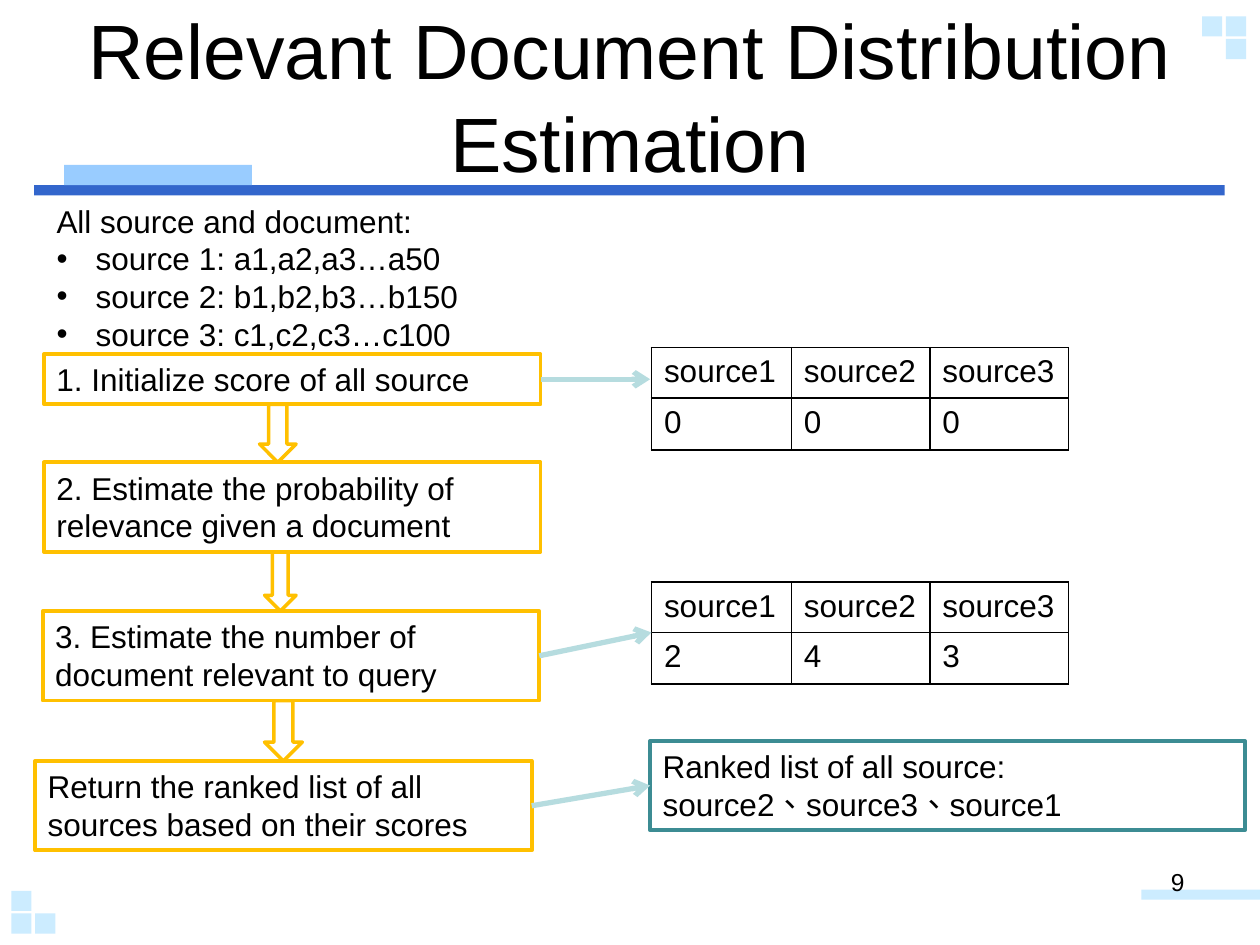
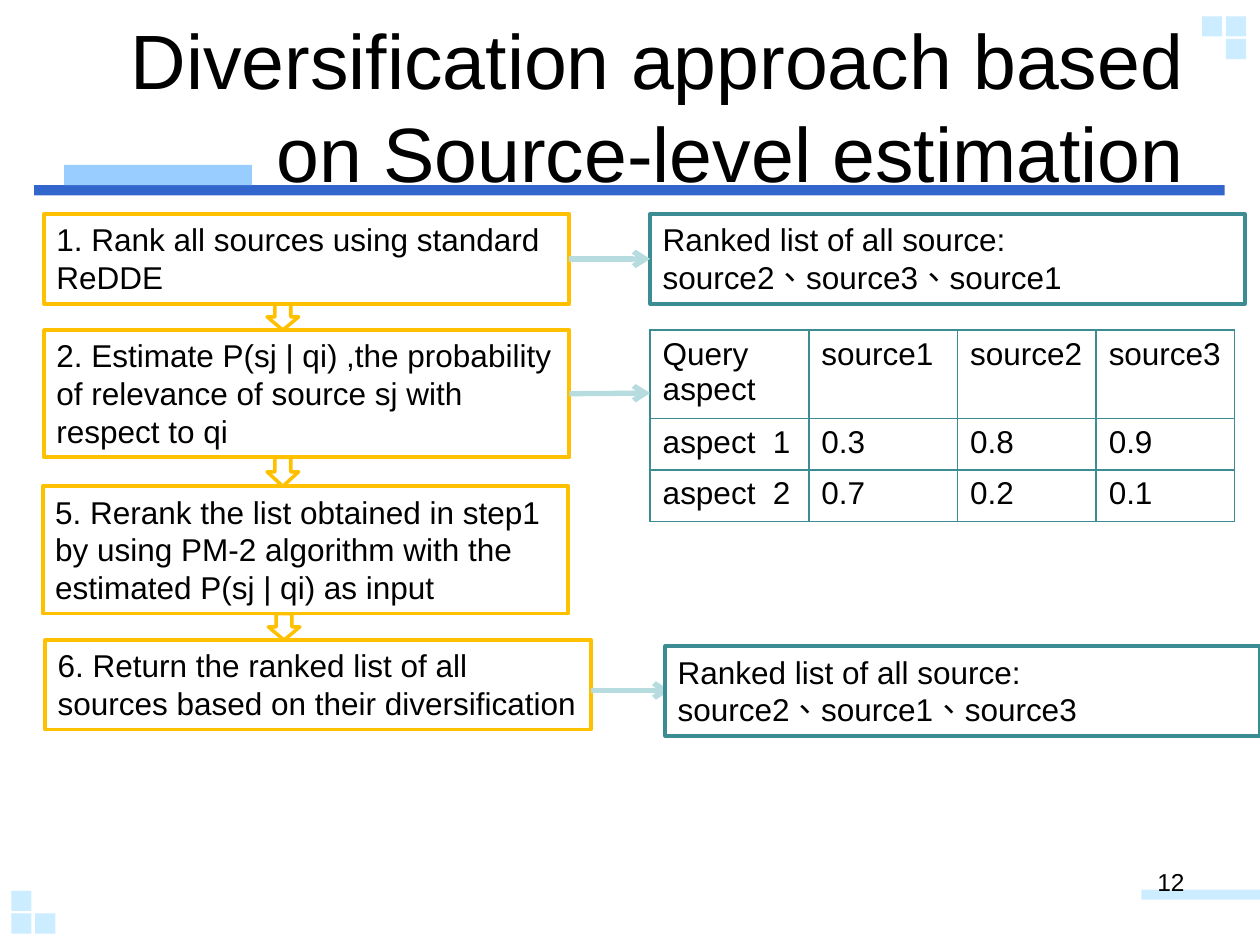
import pptx
import pptx.dml.color
import pptx.enum.shapes
import pptx.enum.text
import pptx.oxml.ns
import pptx.util
from lxml import etree

PX = 9144  # 100 px to the inch
FONT = "Arial"
BLACK, WHITE = "000000", "FFFFFF"
BLUE, SKY, PALE = "3366CC", "99CCFF", "CCECFF"
GOLD, TEAL, MINT = "FFC000", "3C8C93", "B6DCDF"
SHAPE = pptx.enum.shapes.MSO_SHAPE
ALIGN = pptx.enum.text.PP_ALIGN
ANCHOR = pptx.enum.text.MSO_ANCHOR


def px(*nums):
    return [pptx.util.Emu(num * PX) for num in nums]


def color(code):
    return pptx.dml.color.RGBColor.from_string(code)


def add(node, tag, **attrs):
    return etree.SubElement(node, pptx.oxml.ns.qn(tag), attrs)


def write(frame, text, size=18, align=ALIGN.LEFT, anchor=ANCHOR.TOP,
          bullet=False):
    """Fill a text frame, one paragraph a line; bullets start at line two."""
    frame.word_wrap = True
    frame.vertical_anchor = anchor
    for num, line in enumerate(text.split("\n")):
        para = frame.paragraphs[0] if num == 0 else frame.add_paragraph()
        if bullet and num:
            props = para._p.get_or_add_pPr()
            props.set("marL", str(31 * PX))
            props.set("indent", str(-31 * PX))
            add(props, "a:buFont", typeface=FONT)
            add(props, "a:buChar", char="•")
        para.alignment = align
        run = para.add_run()
        run.text = line
        run._r.get_or_add_rPr().set("lang", "zh-TW")
        run.font.name = FONT
        run.font.size = pptx.util.Pt(size)
        run.font.color.rgb = color(BLACK)


class Deck:
    def __init__(self):
        self.prs = pptx.Presentation()
        self.prs.slide_width, self.prs.slide_height = px(1000, 750)

    def page(self, title, num, top, align):
        """Start a slide with its bands, corner squares, title and number."""
        self.slide = self.prs.slides.add_slide(self.prs.slide_layouts[6])
        self.shapes = self.slide.shapes
        self.shape(27, 147, 945, 8, fill=BLUE)
        self.shape(51, 131, 149, 16, fill=SKY)
        self.shape(906, 706, 94, 8, fill=PALE)
        for left, y in ((973, 13), (954, 13), (973, 31),
                        (9, 725), (28, 725), (9, 707)):
            self.shape(left, y, 16, 16, fill=PALE)
        self.text(50, top, 900, 125, title, size=44, align=align,
                  anchor=ANCHOR.MIDDLE)
        self.text(717, 683, 233, 52, num, size=14, align=ALIGN.RIGHT)

    def shape(self, left, top, wide, high, kind=SHAPE.RECTANGLE,
              fill=None, line=None, width=2.25):
        item = self.shapes.add_shape(kind, *px(left, top, wide, high))
        item.shadow.inherit = False
        if fill:
            item.fill.solid()
            item.fill.fore_color.rgb = color(fill)
        else:
            item.fill.background()
        if line:
            item.line.color.rgb = color(line)
            item.line.width = pptx.util.Pt(width)
        else:
            item.line.fill.background()
        return item

    def text(self, left, top, wide, high, text, **style):
        item = self.shapes.add_textbox(*px(left, top, wide, high))
        write(item.text_frame, text, **style)

    def box(self, left, top, wide, high, text, line=GOLD):
        item = self.shape(left, top, wide, high, fill=WHITE, line=line)
        write(item.text_frame, text)
        return item

    def ranks(self, left, top, order):
        return self.box(left, top, 472, 71,
                        "Ranked list of all source:\n" + order, line=TEAL)

    def flow(self, steps, downs):
        """Stack step boxes and put a block arrow (left, width) in each gap."""
        for (left, wide), above, below in zip(downs, steps, steps[1:]):
            foot = above[1] + above[3]
            self.shape(left, foot, wide, below[1] - foot,
                       kind=SHAPE.DOWN_ARROW, line=GOLD, width=2)
        return [self.box(*step) for step in steps]

    def arrow(self, start, end):
        """Join two ends; each is a point or a shape (right to left side)."""
        kind = pptx.enum.shapes.MSO_CONNECTOR.STRAIGHT
        item = self.shapes.add_connector(kind, 0, 0, 0, 0)
        if isinstance(start, tuple):
            item.begin_x, item.begin_y = px(*start)
        else:
            item.begin_connect(start, 3)
        if isinstance(end, tuple):
            item.end_x, item.end_y = px(*end)
        else:
            item.end_connect(end, 1)
        item.line.color.rgb = color(MINT)
        item.line.width = pptx.util.Pt(3)
        add(item.line._get_or_add_ln(), "a:tailEnd", type="arrow")
        add(item._element.spPr, "a:effectLst")

    def table(self, left, top, cols, rows, cells, line):
        frame = self.shapes.add_table(
            len(rows), len(cols), *px(left, top, sum(cols), sum(rows)))
        grid = frame.table
        grid.first_row = grid.horz_banding = False
        for col, wide in zip(grid.columns, px(*cols)):
            col.width = wide
        for row, high in zip(grid.rows, px(*rows)):
            row.height = high
        for y, words in enumerate(cells):
            for x, word in enumerate(words):
                cell = grid.cell(y, x)
                write(cell.text_frame, word)
                props = cell._tc.get_or_add_tcPr()
                for side in ("a:lnL", "a:lnR", "a:lnT", "a:lnB"):
                    edge = add(props, side, w="12700")
                    add(add(edge, "a:solidFill"), "a:srgbClr", val=line)
                cell.fill.background()


def estimate(deck):
    deck.page("Relevant Document Distribution Estimation", "9", 13,
              ALIGN.CENTER)
    deck.text(35, 155, 369, 131,
              "All source and document:\nsource 1: a1,a2,a3…a50\n"
              "source 2: b1,b2,b3…b150\nsource 3: c1,c2,c3…c100", bullet=True)

    # Steps
    first, _, third, last = deck.flow([
        (35, 281, 394, 40, "1. Initialize score of all source"),
        (35, 367, 394, 71,
         "2. Estimate the probability of relevance given a document"),
        (34, 485, 394, 71,
         "3. Estimate the number of document relevant to query"),
        (28, 604, 394, 71,
         "Return the ranked list of all sources based on their scores"),
    ], [(206, 29), (210, 25), (210, 30)])

    # Results of the steps
    names = ["source1", "source2", "source3"]
    for top, scores in ((276, "000"), (462, "243")):
        deck.table(517, top, [111, 110, 110], [40, 41], [names, scores], BLACK)
    final = deck.ranks(516, 588, "source2、source3、source1")
    deck.arrow(first, (516, 301))
    deck.arrow(third, (517, 502))
    deck.arrow(last, final)


def diversify(deck):
    deck.page("Diversification approach based on Source-level estimation",
              "12", 21, ALIGN.RIGHT)

    # Steps
    first, second, _, _ = deck.flow([
        (35, 170, 417, 71, "1. Rank all sources using standard ReDDE"),
        (35, 262, 417, 101, "2. Estimate P(sj | qi) ,the probability of "
         "relevance of source sj with respect to qi"),
        (34, 386, 417, 101, "5. Rerank the list obtained in step1 by using "
         "PM-2 algorithm with the estimated P(sj | qi) as input"),
        (36, 508, 433, 71, "6. Return the ranked list of all sources based "
         "on their diversification"),
    ], [(212, 25), (212, 25), (213, 25)])

    # Results of the steps
    ranked = deck.ranks(516, 170, "source2、source3、source1")
    deck.table(516, 262, [126, 118, 110, 110], [41, 41, 41], [
        ["Query\naspect", "source1", "source2", "source3"],
        ["aspect  1", "0.3", "0.8", "0.9"],
        ["aspect  2", "0.7", "0.2", "0.1"],
    ], TEAL)
    deck.arrow(first, ranked)
    deck.arrow(second, (516, 312))
    deck.arrow((469, 548), (532, 548))
    deck.ranks(528, 513, "source2、source1、source3")


def main():
    deck = Deck()
    estimate(deck)
    diversify(deck)
    deck.prs.save("out.pptx")


if __name__ == "__main__":
    main()
